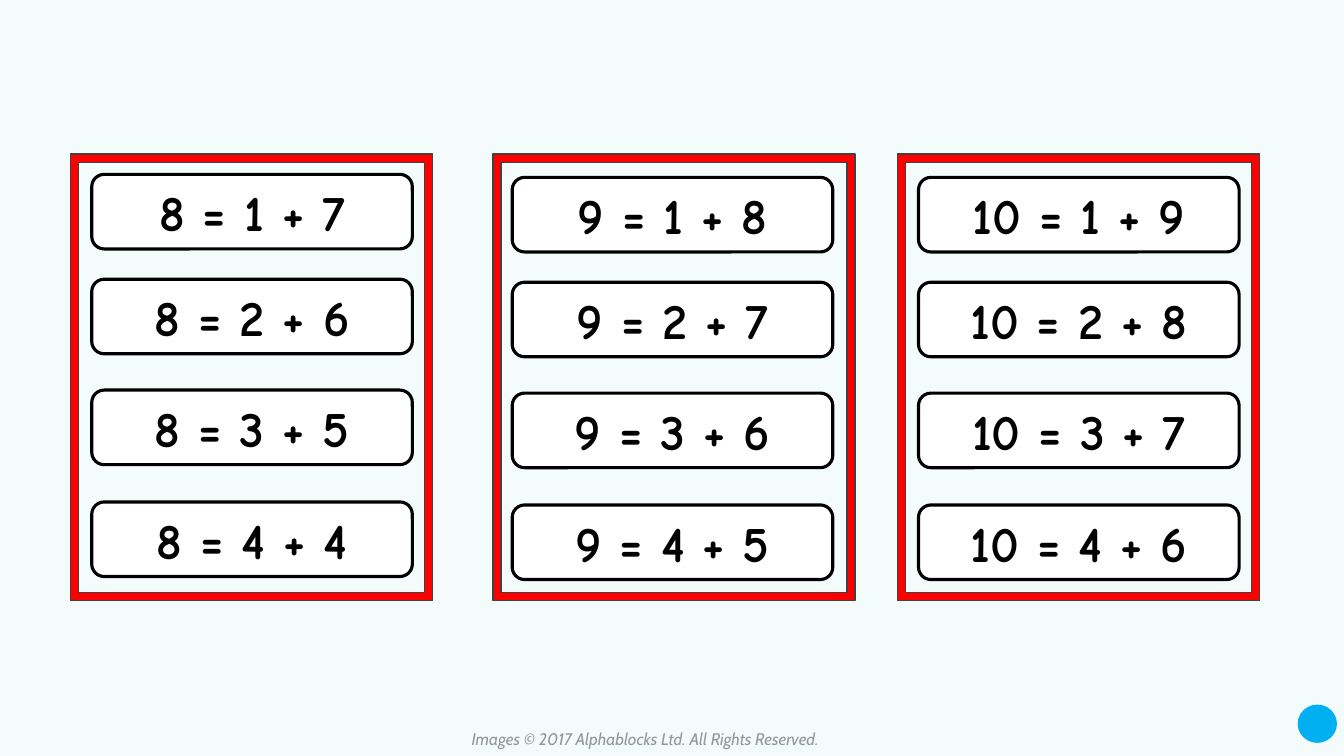
import pptx
import pptx.dml.color
import pptx.enum.shapes
import pptx.enum.text
import pptx.util
from dataclasses import dataclass

# Content
NUMBERS = [8, 9, 10]
FIRST_PARTS = [1, 2, 3, 4]
CREDIT = "Images © 2017 Alphablocks Ltd. All Rights Reserved."

# Layout, in inches
SLIDE_W, SLIDE_H = 13.33, 7.5
FRAME_LEFTS = [0.7, 4.89, 8.9]
FRAME_TOP, FRAME_W, FRAME_H, FRAME_BAR = 1.53, 3.59, 4.43, 0.08
CARD_LEFTS = [0.91, 5.08, 9.11]
CARD_TOPS = [1.73, 1.76, 1.76]
CARD_W, CARD_H = 3.18, 0.74
ROW_OFFSETS = [0, 1.04, 2.14, 3.25]
CREDIT_BOX = (4.58, 7.18, 4.17, 0.3)
DOT_BOX = (12.87, 6.99, 0.39, 0.38)


@dataclass(frozen=True)
class Theme:
    background: str = "F4FBFB"
    card: str = "FFFFFF"
    ink: str = "000000"
    frame: str = "FF0000"
    frame_line: str = "414141"
    dot: str = "00B0F0"
    credit: str = "969798"
    sum_font: str = "Comic Neue"
    credit_font: str = "Cabin"
    sum_size: float = 36
    credit_size: float = 12
    card_line: float = 2.25
    thin_line: float = 1


THEME = Theme()
SHAPE = pptx.enum.shapes.MSO_SHAPE


def rgb(value):
    return pptx.dml.color.RGBColor.from_string(value)


def inches(box):
    return [pptx.util.Inches(v) for v in box]


def add_shape(shapes, kind, box, fill, line=None, width=0):
    sp = shapes.add_shape(kind, *inches(box))
    sp.shadow.inherit = False
    sp.fill.solid()
    sp.fill.fore_color.rgb = rgb(fill)
    if line:
        sp.line.color.rgb = rgb(line)
        sp.line.width = pptx.util.Pt(width)
    else:
        sp.line.fill.background()
    return sp


def write(sp, text, font, size, color, bold=False, italic=False):
    """Put one line of formatted text in a shape and return its paragraph."""
    p = sp.text_frame.paragraphs[0]
    p.text = text
    f = p.runs[0].font
    f.name, f.size, f.bold, f.italic = font, pptx.util.Pt(size), bold, italic
    f.color.rgb = rgb(color)
    return p


def add_card(shapes, box, text):
    sp = add_shape(shapes, SHAPE.ROUNDED_RECTANGLE, box,
                   THEME.card, THEME.ink, THEME.card_line)
    tf = sp.text_frame
    tf.margin_top = tf.margin_bottom = 0
    tf.vertical_anchor = pptx.enum.text.MSO_ANCHOR.MIDDLE
    p = write(sp, text, THEME.sum_font, THEME.sum_size, THEME.ink, bold=True)
    p.alignment = pptx.enum.text.PP_ALIGN.CENTER


def add_number_panel(slide, number, frame_left, card_left, card_top):
    cards = slide.shapes.add_group_shape().shapes
    for part, offset in zip(FIRST_PARTS, ROW_OFFSETS):
        add_card(cards, (card_left, card_top + offset, CARD_W, CARD_H),
                 f"{number} = {part} + {number - part}")
    frame = add_shape(slide.shapes, SHAPE.FRAME,
                      (frame_left, FRAME_TOP, FRAME_W, FRAME_H),
                      THEME.frame, THEME.frame_line, THEME.thin_line)
    frame.adjustments[0] = FRAME_BAR / FRAME_W


def main():
    prs = pptx.Presentation()
    prs.slide_width, prs.slide_height = inches((SLIDE_W, SLIDE_H))
    slide = prs.slides.add_slide(prs.slide_layouts[6])
    slide.background.fill.solid()
    slide.background.fill.fore_color.rgb = rgb(THEME.background)

    credit = slide.shapes.add_textbox(*inches(CREDIT_BOX))
    write(credit, CREDIT, THEME.credit_font, THEME.credit_size,
          THEME.credit, italic=True)

    for panel in zip(NUMBERS, FRAME_LEFTS, CARD_LEFTS, CARD_TOPS):
        add_number_panel(slide, *panel)

    add_shape(slide.shapes, SHAPE.OVAL, DOT_BOX, THEME.dot)
    prs.save("out.pptx")


if __name__ == "__main__":
    main()
